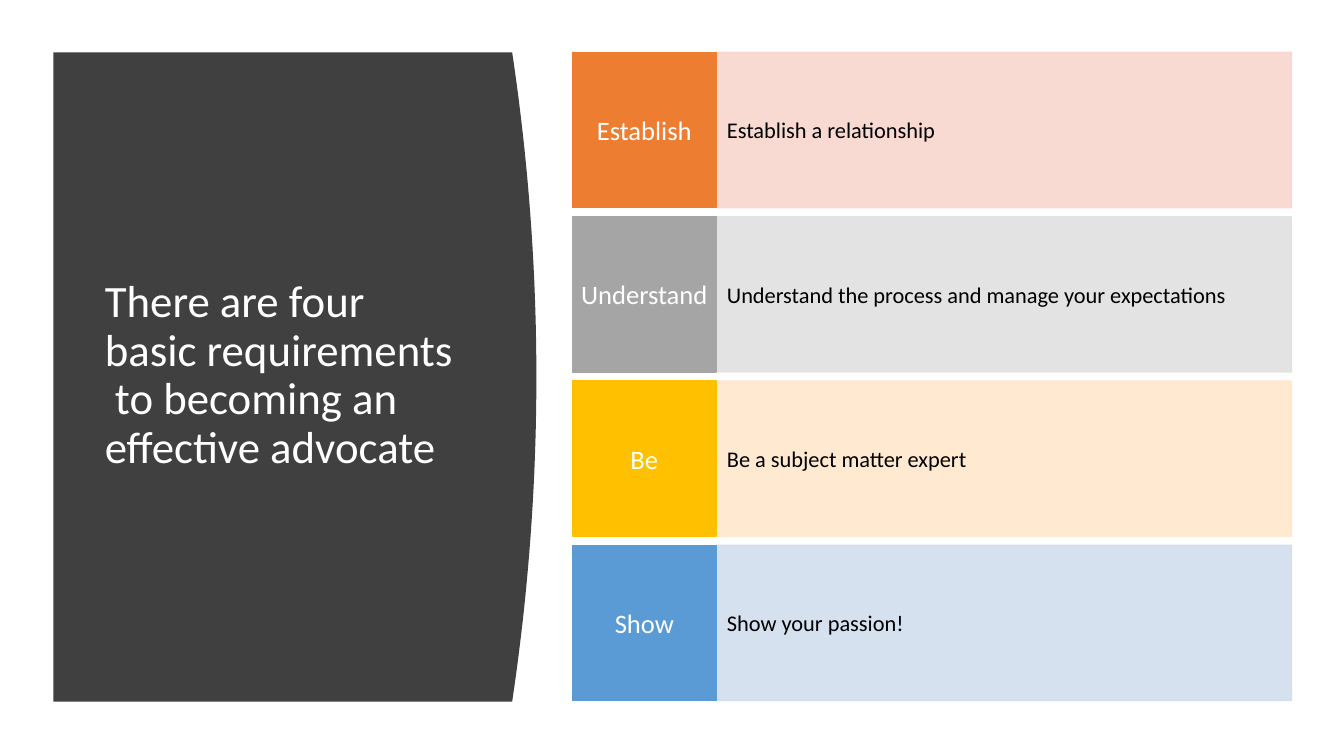
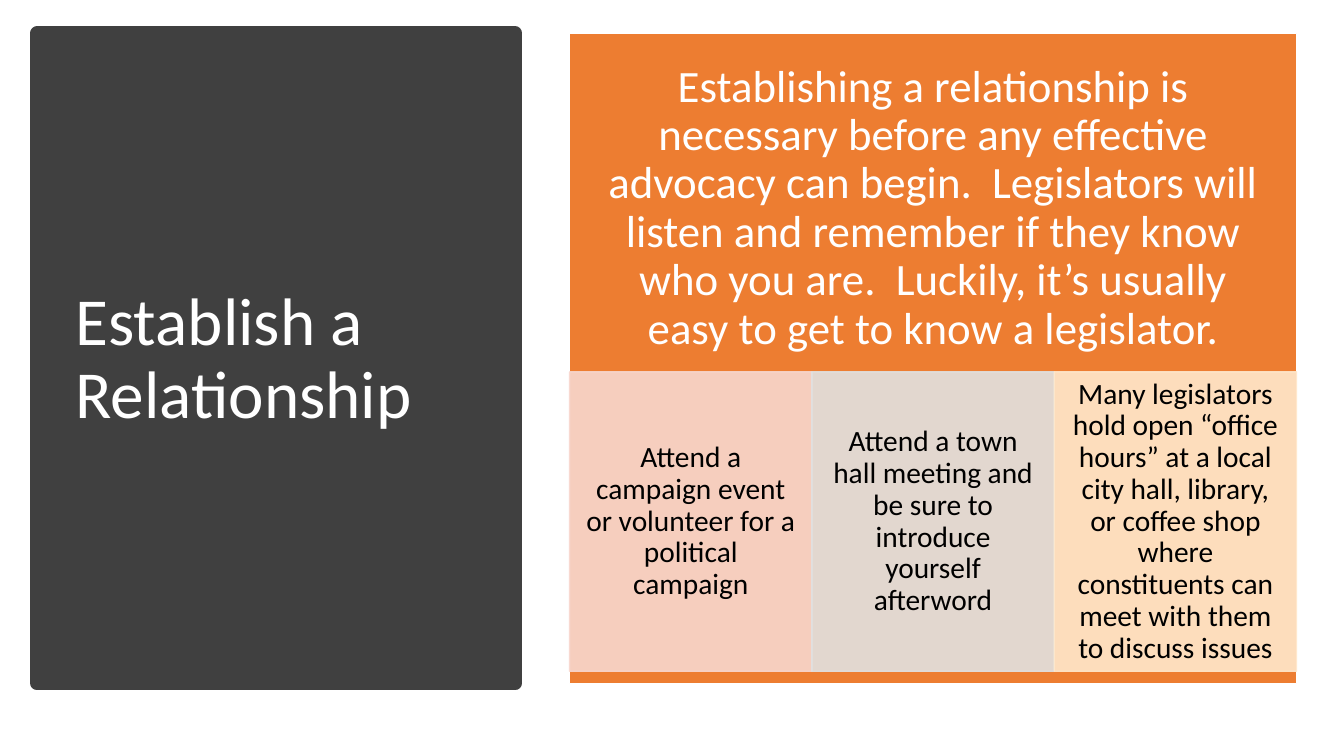
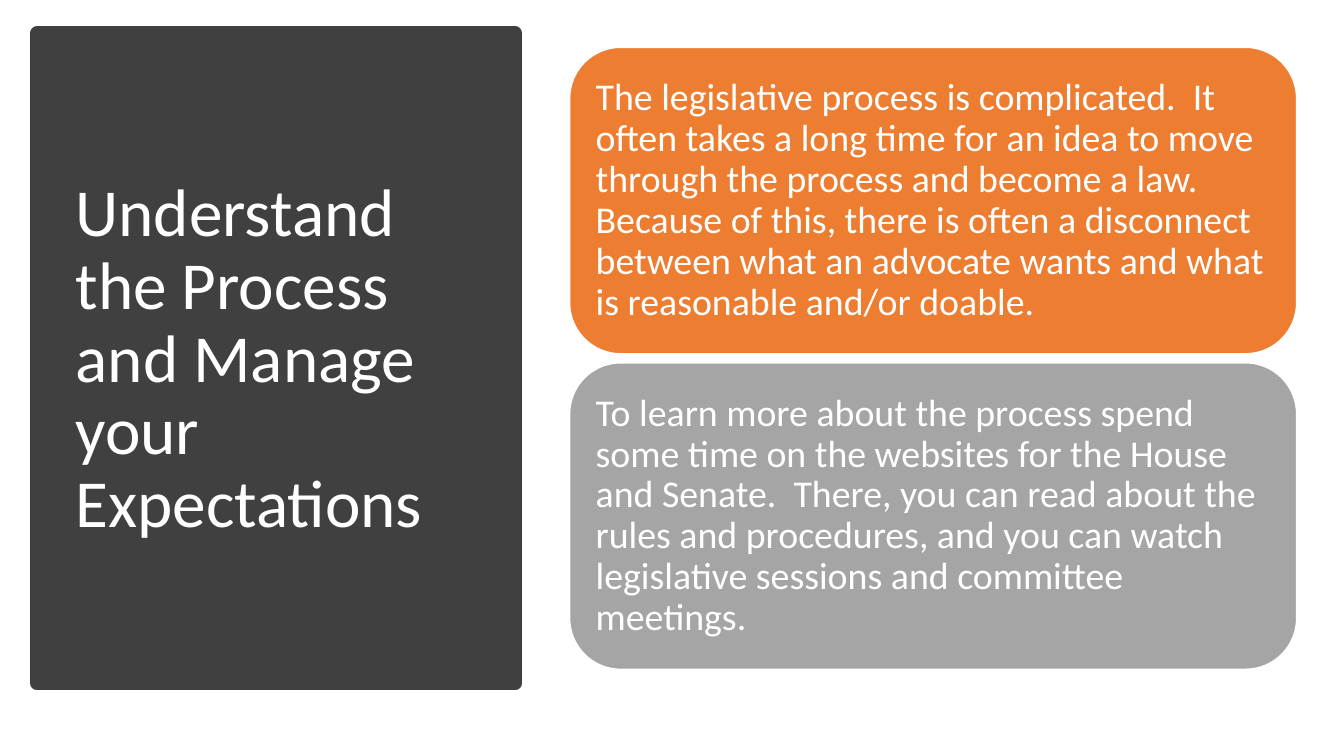
from lxml.etree import SubElement
from pptx import Presentation
from pptx.dml.color import RGBColor
from pptx.enum.shapes import MSO_SHAPE
from pptx.enum.text import MSO_ANCHOR, PP_ALIGN
from pptx.oxml.ns import qn
from pptx.util import Inches, Pt

FONT = "Calibri"
WHITE, BLACK, CHARCOAL = "FFFFFF", "000000", "404040"
ORANGE, GREY, GOLD, BLUE = "ED7D31", "A5A5A5", "FFC000", "5B9BD5"
PALE_ORANGE, PALE_GREY, PALE_GOLD, PALE_BLUE = "F8D7CE", "E1E1E1", "FFE8CC", "D2DEEF"
TINT_OPACITY = 90

SIDE_PANEL = (0.37, 0.33, 4.74, 6.45)
CURVED_PANEL = (0.53, 0.52, 4.79, 6.44)


def paint(fill, hex_color, opacity=100):
    fill.solid()
    fill.fore_color.rgb = RGBColor.from_string(hex_color)
    if opacity < 100:
        for color in fill._xPr.iter(qn("a:srgbClr")):
            SubElement(color, qn("a:alpha"), val=str(opacity * 1000))


def write(shape, text, size, color=WHITE, align=PP_ALIGN.LEFT, insets=(0.1, 0.05, 0.1, 0.05),
          spacing=0.9):
    """Fill a shape with one paragraph; insets run left, top, right, bottom."""
    frame = shape.text_frame
    frame.word_wrap = True
    frame.vertical_anchor = MSO_ANCHOR.MIDDLE
    (frame.margin_left, frame.margin_top,
     frame.margin_right, frame.margin_bottom) = map(Inches, insets)
    paragraph = frame.paragraphs[0]
    paragraph.text = text
    paragraph.alignment = align
    paragraph.line_spacing = spacing
    paragraph.font.name = FONT
    paragraph.font.size = Pt(size)
    paragraph.font.color.rgb = RGBColor.from_string(color)


def add_block(slide, box, fill, line=None, line_width=1, opacity=100, kind=MSO_SHAPE.RECTANGLE):
    block = slide.shapes.add_shape(kind, *map(Inches, box))
    block.shadow.inherit = False
    paint(block.fill, fill, opacity)
    paint(block.line.fill, line or fill, opacity)
    block.line.width = Pt(line_width)
    return block


def add_side_title(slide, title):
    panel = add_block(slide, SIDE_PANEL, CHARCOAL, line_width=10)
    write(panel, title, 48, insets=(0.38, 0.42, 0.4, 0.38))


def add_curved_title(slide, box, title, bulge=0.24, steps=40):
    """Draw a title panel whose right edge bows outwards as a parabola."""
    left, top, width, height = box
    edge = []
    for step in range(steps + 1):
        offset = 2 * step / steps - 1
        edge.append((left + width - bulge * offset ** 2, top + height * step / steps))
    outline = [(Inches(x), Inches(y)) for x, y in edge + [(left, top + height)]]
    builder = slide.shapes.build_freeform(Inches(left), Inches(top))
    builder.add_line_segments(outline, close=True)
    panel = builder.convert_to_shape()
    panel.shadow.inherit = False
    paint(panel.fill, CHARCOAL)
    panel.line.fill.background()
    write(panel, title, 32, insets=(0.51, 0.64, 0.74, 0.66))


def add_requirements(slide, box, requirements, label_width=1.42, gap=0.09):
    left, top, width, height = box
    row_height = (height - gap * (len(requirements) - 1)) / len(requirements)
    for index, (keyword, sentence, strong, pale) in enumerate(requirements):
        row_top = top + index * (row_height + gap)
        detail = add_block(slide, (left + label_width, row_top, width - label_width, row_height),
                           pale, opacity=TINT_OPACITY)
        write(detail, sentence, 16, BLACK, insets=(0.11, 0.39, 0.11, 0.39), spacing=1.0)
        label = add_block(slide, (left, row_top, label_width, row_height), strong)
        write(label, keyword, 19, align=PP_ALIGN.CENTER, insets=(0.05, 0.15, 0.05, 0.15),
              spacing=1.0)


def add_statement_with_tips(slide, box, statement, tips, statement_height=3.48,
                            tips_offset=3.36, tips_height=2.97):
    left, top, width, height = box
    backdrop = add_block(slide, box, ORANGE, line=WHITE)
    write(backdrop, statement, 32, align=PP_ALIGN.CENTER,
          insets=(0.25, 0.25, 0.25, height - statement_height + 0.25))
    tip_width = width / len(tips)
    for index, (tip, pale) in enumerate(tips):
        cell = add_block(slide, (left + index * tip_width, top + tips_offset, tip_width, tips_height),
                         pale, opacity=TINT_OPACITY)
        write(cell, tip, 21, BLACK, PP_ALIGN.CENTER, insets=(0.16, 0.03, 0.16, 0.03))


def add_cards(slide, box, cards, gap=0.09):
    left, top, width, height = box
    card_height = (height - gap * (len(cards) - 1)) / len(cards)
    for index, (message, fill) in enumerate(cards):
        card = add_block(slide, (left, top + index * (card_height + gap), width, card_height),
                         fill, line=WHITE, kind=MSO_SHAPE.ROUNDED_RECTANGLE)
        write(card, message, 27, insets=(0.11, 0.11, 0.11, 0.11))


def main():
    deck = Presentation()
    deck.slide_width, deck.slide_height = Inches(13.33), Inches(7.5)
    overview, relationship, process = (
        deck.slides.add_slide(deck.slide_layouts[6]) for _ in range(3))

    add_curved_title(overview, CURVED_PANEL,
                     "There are four basic requirements\v to becoming an effective advocate")
    add_requirements(overview, (5.68, 0.52, 7.13, 6.43), [
        ("Establish", "Establish a relationship", ORANGE, PALE_ORANGE),
        ("Understand", "Understand the process and manage your expectations", GREY, PALE_GREY),
        ("Be", "Be a subject matter expert", GOLD, PALE_GOLD),
        ("Show", "Show your passion!", BLUE, PALE_BLUE),
    ])

    add_side_title(relationship, "Establish a Relationship")
    add_statement_with_tips(
        relationship, (5.65, 0.33, 7.21, 6.45),
        "Establishing a relationship is necessary before any effective advocacy can begin.  "
        "Legislators will listen and remember if they know who you are.  "
        "Luckily, it’s usually easy to get to know a legislator.",
        [
            ("Attend a campaign event or volunteer for a political campaign", PALE_ORANGE),
            ("Attend a town hall meeting and be sure to introduce yourself afterword", PALE_GREY),
            ("Many legislators hold open “office hours” at a local city hall, library, or coffee "
             "shop where constituents can meet with them to discuss issues", PALE_GOLD),
        ])

    add_side_title(process, "Understand the Process and Manage your Expectations")
    add_cards(process, (5.65, 0.47, 7.21, 6.17), [
        ("The legislative process is complicated.  It often takes a long time for an idea to move "
         "through the process and become a law.  Because of this, there is often a disconnect "
         "between what an advocate wants and what is reasonable and/or doable.", ORANGE),
        ("To learn more about the process spend some time on the websites for the House and "
         "Senate.  There, you can read about the rules and procedures, and you can watch "
         "legislative sessions and committee meetings.", GREY),
    ])

    deck.save("out.pptx")


if __name__ == "__main__":
    main()
